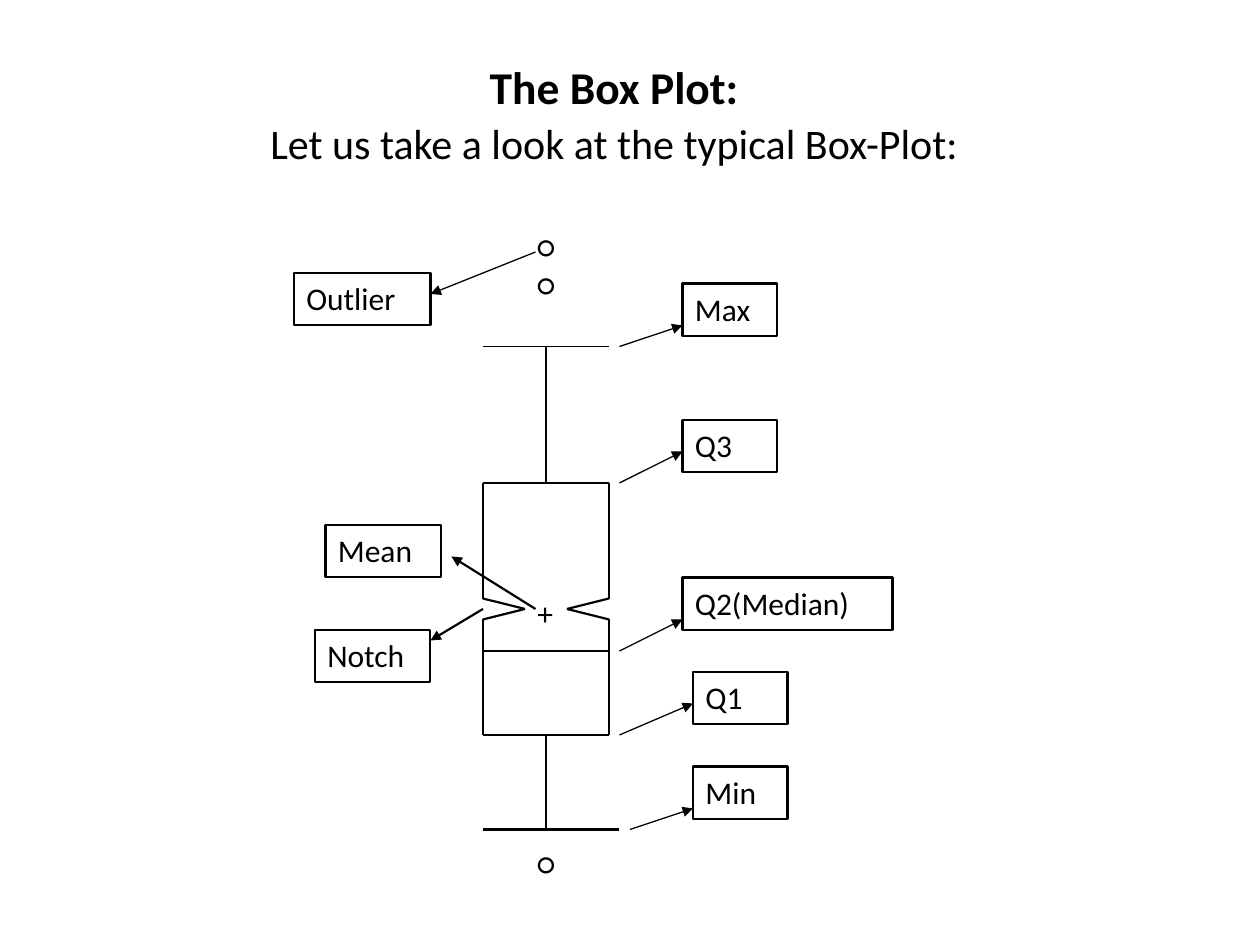
"""Build a slide that explains the parts of a notched box plot."""
import pptx
import pptx.dml.color
import pptx.enum.shapes
import pptx.enum.text
import pptx.oxml
import pptx.oxml.ns
import pptx.util

Pt = pptx.util.Pt
theme = {
    "ink": pptx.dml.color.RGBColor(0, 0, 0),
    "font": "Calibri",
    "title": Pt(26),
    "lead": Pt(24),
    "label": Pt(18),
    "thick": Pt(1.25),
    "thin": Pt(0.75),
}
frame = {
    "word_wrap": True,
    "auto_size": pptx.enum.text.MSO_AUTO_SIZE.SHAPE_TO_FIT_TEXT,
    "vertical_anchor": pptx.enum.text.MSO_ANCHOR.TOP,
}
left, centre = pptx.enum.text.PP_ALIGN.LEFT, pptx.enum.text.PP_ALIGN.CENTER

deck = pptx.Presentation()
deck.slide_width, deck.slide_height = Pt(720), Pt(540)
slide = deck.slides.add_slide(deck.slide_layouts[6])
shapes = slide.shapes


def write(shape, rows, align=left):
    body = shape.text_frame
    for key, value in frame.items():
        setattr(body, key, value)
    for index, (text, size, bold, gap) in enumerate(rows):
        para = body.add_paragraph() if index else body.paragraphs[0]
        para.alignment, para.space_before = align, Pt(gap)
        run = para.add_run()
        run.text = text
        style = {"name": theme["font"], "size": theme[size], "bold": bold}
        for key, value in style.items():
            setattr(run.font, key, value)
        run.font.color.rgb = theme["ink"]


def draw(start, end, width="thick", arrow=False):
    kind = pptx.enum.shapes.MSO_CONNECTOR.STRAIGHT
    line = shapes.add_connector(kind, *map(Pt, start + end))
    line.line.color.rgb = theme["ink"]
    line.line.width = theme[width]
    props = line.line._get_or_add_ln()
    if arrow:
        tail = pptx.oxml.parse_xml(
            f'<a:tailEnd {pptx.oxml.ns.nsdecls("a")} type="triangle"/>')
        props.append(tail)
    props.addnext(pptx.oxml.parse_xml(
        f'<a:effectLst {pptx.oxml.ns.nsdecls("a")}/>'))


head = shapes.add_textbox(Pt(48), Pt(30), Pt(606), Pt(70.5))
write(head, [
    ("The Box Plot:", "title", True, 0),
    ("Let us take a look at the typical Box-Plot:", "lead", False, 2.6),
], centre)

west, mid, east = 276, 312, 348
high, third, second, first, low = 198, 276, 372, 420, 474
notch, half, depth = 348, 6, 24

for side, inner in ((west, west + depth), (east, east - depth)):
    draw((side, third), (side, notch - half))
    draw((side, notch - half), (inner, notch))
    draw((inner, notch), (side, notch + half))
    draw((side, notch + half), (side, first))
for level in (third, second, first):
    draw((west, level), (east, level))
for top, base in ((high, third), (first, low)):
    draw((mid, top), (mid, base))
draw((west, high), (east, high), "thin")
draw((west, low), (east + 6, low))

marks = [("○○", 126, 61.2), ("+", 336, 29), ("○", 478.8, 29)]
for signs, top, height in marks:
    mark = shapes.add_textbox(Pt(300), Pt(top), Pt(24), Pt(height))
    write(mark, [(sign, "label", False, 0) for sign in signs])

labels = [
    ("Outlier", 168, 156, 78, (306, 144), (246, 168), "thin"),
    ("Max", 390, 162, 54, (354, high), (390, 186), "thin"),
    ("Q3", 390, 240, 54, (354, third), (390, 258), "thin"),
    ("Q2(Median)", 390, 330, 120, (354, second), (390, 354), "thin"),
    ("Q1", 396, 384, 54, (354, first), (396, 402), "thin"),
    ("Min", 396, 438, 54, (360, low), (396, 462), "thin"),
    ("Mean", 186, 300, 66, (306, notch), (258, 318), "thick"),
    ("Notch", 180, 360, 66, (west, notch), (246, 366), "thick"),
]
for text, x, y, width, start, end, weight in labels:
    rect = pptx.enum.shapes.MSO_SHAPE.RECTANGLE
    box = shapes.add_shape(rect, Pt(x), Pt(y), Pt(width), Pt(30))
    box.shadow.inherit = False
    box.fill.background()
    box.line.color.rgb = theme["ink"]
    box.line.width = theme["thick"]
    write(box, [(text, "label", False, 0)])
    draw(start, end, weight, True)

deck.save("out.pptx")
